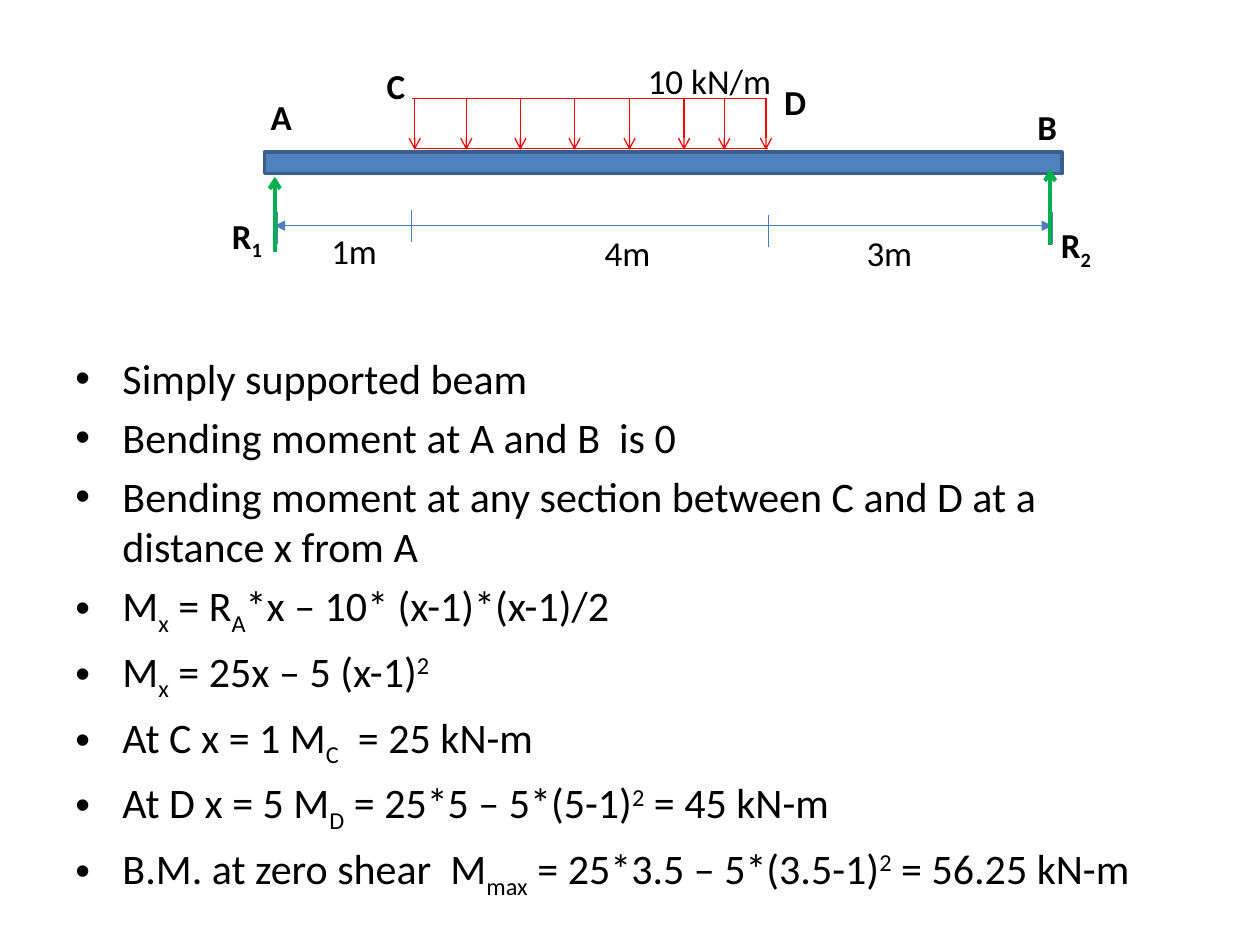
from dataclasses import dataclass

import pptx
import pptx.dml.color
import pptx.enum.shapes
import pptx.enum.text
import pptx.oxml.ns
import pptx.util
from lxml import etree

Cm = pptx.util.Cm
Pt = pptx.util.Pt
qn = pptx.oxml.ns.qn

COLORS = {"beam": "4F81BD", "beam_edge": "3A5F8C", "load": "FF0000",
          "dimension": "4B7EBC", "reaction": "00B050", "text": "000000"}
BASELINES = {"_": "-25000", "^": "30000"}
LOAD_TOP, LOAD_BOTTOM = 1.98, 3.02
TICK_HEIGHT = 0.64
DIMENSION_Y = 4.55


@dataclass
class Stroke:
    x1: float
    y1: float
    x2: float
    y2: float
    color: str
    width: float = 0.75
    head: str = ""
    tail: str = ""


@dataclass
class Label:
    text: str
    left: float
    top: float
    bold: bool = False
    width: float = 2.34


LOAD_ARROWS = [8.36, 9.4, 10.49, 11.58, 12.69, 13.79, 14.6, 15.44]
TICKS = [(5.59, 4.27), (8.29, 4.24), (15.49, 4.34), (21.21, 4.27)]

STROKES = [
    Stroke(8.31, LOAD_TOP, 15.44, LOAD_TOP, "load"),
    Stroke(8.36, 3.0, 15.49, 3.0, "load"),
    *[Stroke(x, LOAD_TOP, x, LOAD_BOTTOM, "load", tail="arrow") for x in LOAD_ARROWS],
    Stroke(5.54, DIMENSION_Y, 21.21, DIMENSION_Y, "dimension",
           head="triangle", tail="triangle"),
    *[Stroke(x, y, x, y + TICK_HEIGHT, "dimension") for x, y in TICKS],
    Stroke(5.54, 5.08, 5.54, 3.56, "reaction", 2.25, tail="arrow"),
    Stroke(21.17, 4.93, 21.17, 3.4, "reaction", 2.25, tail="arrow"),
]

LABELS = [
    Label("1m", 5.97, 4.5),
    Label("4m", 11.48, 4.55),
    Label("3m", 16.76, 4.55),
    Label("A", 4.5, 1.8, True),
    Label("B", 19.94, 2.01, True),
    Label("C", 6.81, 1.17, True),
    Label("D", 14.86, 1.5, True),
    Label("R|_1", 3.81, 4.19, True),
    Label("R|_2", 20.52, 4.39, True),
    Label("10 kN/m", 12.5, 1.07, width=3.61),
]

STEPS = [
    "Simply supported beam",
    "Bending moment at A and B  is 0",
    "Bending moment at any section between C and D at a distance x from A",
    "M|_x| = R|_A|*x – 10* (x-1)*(x-1)/2",
    "M|_x| = 25x – 5 (x-1)|^2",
    "At C x = 1 M|_C|  = 25 kN-m",
    "At D x = 5 M|_D| = 25*5 – 5*(5-1)|^2| = 45 kN-m",
    "B.M. at zero shear  M|_max| = 25*3.5 – 5*(3.5-1)|^2| = 56.25 kN-m",
]


def rgb(name: str) -> pptx.dml.color.RGBColor:
    """Look up a named colour."""
    return pptx.dml.color.RGBColor.from_string(COLORS[name])


def write_formula(paragraph, text: str, size: float, bold: bool = False) -> None:
    """Write runs split at bars, lowering those after _ and raising those after ^."""
    paragraph.font.name = "Calibri"
    paragraph.font.size = Pt(size)
    paragraph.font.bold = bold
    paragraph.font.color.rgb = rgb("text")
    for part in text.split("|"):
        run = paragraph.add_run()
        baseline = BASELINES.get(part[0])
        run.text = part[1:] if baseline else part
        if baseline:
            run._r.get_or_add_rPr().set("baseline", baseline)


def draw_beam(slide) -> None:
    """Draw the beam as a flat bar."""
    beam = slide.shapes.add_shape(pptx.enum.shapes.MSO_SHAPE.RECTANGLE,
                                  Cm(5.33), Cm(3.07), Cm(16.08), Cm(0.43))
    beam.shadow.inherit = False
    beam.fill.solid()
    beam.fill.fore_color.rgb = rgb("beam")
    beam.line.color.rgb = rgb("beam_edge")
    beam.line.width = Pt(2)


def draw_stroke(slide, stroke: Stroke) -> None:
    """Draw a straight line with optional arrowheads."""
    connector = slide.shapes.add_connector(
        pptx.enum.shapes.MSO_CONNECTOR.STRAIGHT,
        Cm(stroke.x1), Cm(stroke.y1), Cm(stroke.x2), Cm(stroke.y2))
    connector.line.color.rgb = rgb(stroke.color)
    connector.line.width = Pt(stroke.width)
    outline = connector.line._get_or_add_ln()
    for tag, kind in (("a:headEnd", stroke.head), ("a:tailEnd", stroke.tail)):
        if kind:
            etree.SubElement(outline, qn(tag)).set("type", kind)
    etree.SubElement(connector._element.spPr, qn("a:effectLst"))


def draw_label(slide, label: Label) -> None:
    """Draw a centred label of the beam diagram."""
    box = slide.shapes.add_textbox(Cm(label.left), Cm(label.top), Cm(label.width), Cm(1.11))
    box.text_frame.word_wrap = True
    paragraph = box.text_frame.paragraphs[0]
    paragraph.alignment = pptx.enum.text.PP_ALIGN.CENTER
    write_formula(paragraph, label.text, 20, label.bold)


def draw_steps(slide, steps: list[str]) -> None:
    """Write the bulleted calculation below the beam."""
    frame = slide.shapes.add_textbox(Cm(1.27), Cm(6.99), Cm(22.86), Cm(11.23)).text_frame
    frame.word_wrap = True
    for index, step in enumerate(steps):
        paragraph = frame.add_paragraph() if index else frame.paragraphs[0]
        paragraph.space_before = Pt(4.8)
        write_formula(paragraph, step, 24)
        properties = paragraph._p.get_or_add_pPr()
        properties.set("marL", str(Cm(0.95)))
        properties.set("indent", str(-Cm(0.95)))
        bullet_font = etree.Element(qn("a:buFont"), typeface="Arial")
        bullet = etree.Element(qn("a:buChar"), char="•")
        defaults = properties.find(qn("a:defRPr"))
        defaults.addprevious(bullet_font)
        defaults.addprevious(bullet)


def main() -> None:
    """Build the beam slide."""
    deck = pptx.Presentation()
    deck.slide_width, deck.slide_height = Cm(25.4), Cm(19.05)
    slide = deck.slides.add_slide(deck.slide_layouts[6])
    draw_steps(slide, STEPS)
    draw_beam(slide)
    for stroke in STROKES:
        draw_stroke(slide, stroke)
    for label in LABELS:
        draw_label(slide, label)
    deck.save("out.pptx")


if __name__ == "__main__":
    main()
